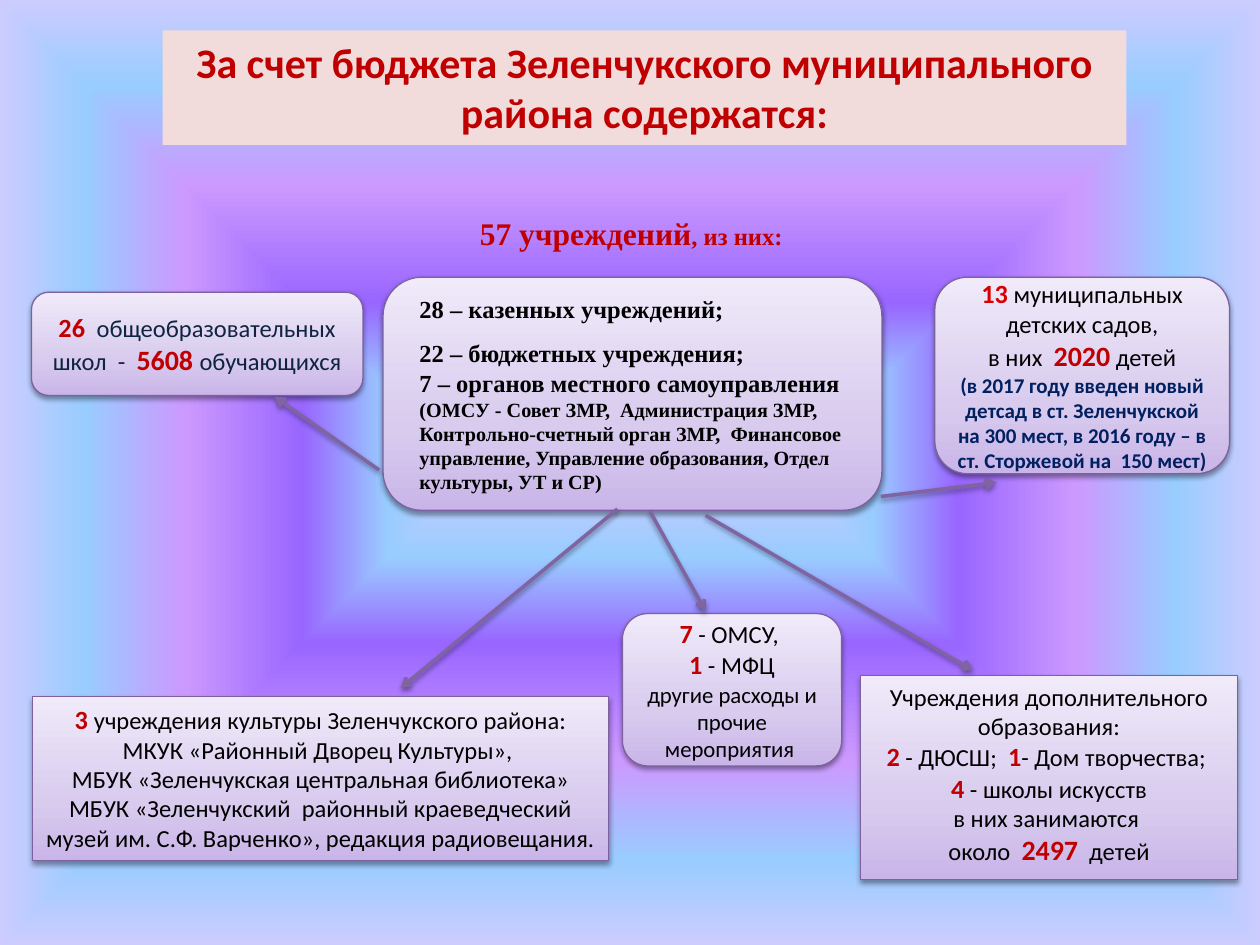
"""Build a slide on the institutions kept by a district budget."""
from dataclasses import dataclass
from lxml import etree
from pptx import Presentation
from pptx import util as u
from pptx.dml.color import RGBColor
from pptx.enum import shapes, text
from pptx.oxml.ns import qn

ROUND = shapes.MSO_SHAPE.ROUNDED_RECTANGLE
RECT = shapes.MSO_SHAPE.RECTANGLE
TOP = text.MSO_ANCHOR.TOP
MID = text.MSO_ANCHOR.MIDDLE
LEFT = text.PP_ALIGN.LEFT
CENTER = text.PP_ALIGN.CENTER


@dataclass(frozen=True)
class Theme:
    """Colours, gradients and run styles of the slide."""
    back = ((0, "CCCCFF"), (18, "99CCFF"), (36, "9966FF"),
            (61, "CC99FF"), (82, "99CCFF"), (100, "CCCCFF"))
    card = ((0, "C9B5E8"), (35, "D8CBEE"), (100, "F0EAF9"))
    edge = "7D60A0"
    arrow = "8064A2"
    band = "F2DCDB"
    runs = {
        "title": ("Calibri", 24, "C00000", True),
        "num": ("Calibri", 15, "C00000", True),
        "big": ("Calibri", 16, "C00000", True),
        "red": ("Calibri", 15, "DA0000", True),
        "body": ("Calibri", 14, "000000", False),
        "small": ("Calibri", 13, "000000", False),
        "navy": ("Calibri", 14, "0F243E", False),
        "note": ("Calibri", 12, "002060", True),
        "head": ("Times New Roman", 18, "C00000", True),
        "sub": ("Times New Roman", 14, "C00000", True),
        "item": ("Times New Roman", 14, "000000", True),
        "list": ("Times New Roman", 11.5, "000000", True),
    }


THEME = Theme()


def put(obj, vals):
    """Set each attribute named in a dict."""
    for key, val in vals.items():
        setattr(obj, key, val)


def node(top, tag, **vals):
    """Add a DrawingML child with the given attributes."""
    kid = etree.SubElement(top, qn("a:" + tag))
    for key, val in vals.items():
        kid.set(key, str(val))
    return kid


def blend(solid, stops):
    """Put a gradient in place of a solid fill and return it."""
    top = solid.getparent()
    grad = node(top, "gradFill", rotWithShape=1)
    row = node(grad, "gsLst")
    for pos, tone in stops:
        node(node(row, "gs", pos=pos * 1000), "srgbClr", val=tone)
    top.replace(solid, grad)
    return grad


def shade(props):
    """Give shape properties a soft shadow below."""
    drop = props.find(qn("a:effectLst"))
    if drop is None:
        drop = node(props, "effectLst")
    cast = node(drop, "outerShdw", blurRad=u.Pt(3.1), dist=u.Pt(1.6),
                dir=5400000, rotWithShape=0)
    node(node(cast, "srgbClr", val="000000"), "alpha", val=38000)


def stroke(line, tone, width):
    """Colour a line and set its width."""
    line.color.rgb = RGBColor.from_string(tone)
    line.width = u.Pt(width)


def write(frame, paras, anchor=MID, forms=()):
    """Write paragraphs of (text, style) runs into a frame."""
    put(frame, {"word_wrap": True, "auto_size": text.MSO_AUTO_SIZE.NONE,
                "vertical_anchor": anchor})
    forms = dict(forms)
    for i, runs in enumerate(paras):
        para = frame.add_paragraph() if i else frame.paragraphs[0]
        put(para, {"alignment": CENTER, **forms.get(i, {})})
        for words, style in runs:
            run = para.add_run()
            run.text = words
            face, size, tone, bold = THEME.runs[style]
            put(run.font, {"name": face, "size": u.Pt(size), "bold": bold})
            run.font.color.rgb = RGBColor.from_string(tone)


def backdrop(slide):
    """Fill the background with a gradient towards the centre."""
    slide.background.fill.solid()
    solid = slide._element.xpath(".//p:bgPr/a:solidFill")[0]
    half = dict.fromkeys("ltrb", 50000)
    node(node(blend(solid, THEME.back), "path", path="shape"),
         "fillToRect", **half)


def title(slide, box, words):
    """Place and format the title."""
    head = slide.shapes.title
    put(head, dict(zip(("left", "top", "width", "height"), map(u.Pt, box))))
    head.fill.solid()
    head.fill.fore_color.rgb = RGBColor.from_string(THEME.band)
    write(head.text_frame, [[(words, "title")]], TOP)


def card(slide, kind, box, paras=(), anchor=MID):
    """Add a shaded card with centred text."""
    shape = slide.shapes.add_shape(kind, *map(u.Pt, box))
    shape.shadow.inherit = False
    shape.fill.solid()
    props = shape._element.spPr
    node(blend(props.find(qn("a:solidFill")), THEME.card), "lin",
         ang=16200000, scaled=1)
    stroke(shape.line, THEME.edge, 0.75)
    shade(props)
    write(shape.text_frame, paras, anchor)


def label(slide, box, paras, forms):
    """Add a text box whose left-aligned paragraphs are indented."""
    frame = slide.shapes.add_textbox(*map(u.Pt, box)).text_frame
    write(frame, paras, TOP, forms)
    for para in frame.paragraphs:
        if para.alignment == LEFT:
            para._p.get_or_add_pPr().set("marL", str(u.Pt(14.4)))


def arrow(slide, *ends):
    """Add a shaded arrow from one point to another."""
    line = slide.shapes.add_connector(shapes.MSO_CONNECTOR.STRAIGHT,
                                      *map(u.Pt, ends))
    stroke(line.line, THEME.arrow, 2)
    node(line.line._get_or_add_ln(), "tailEnd", type="arrow")
    shade(line._element.spPr)


def main():
    """Build and save the slide."""
    deck = Presentation()
    put(deck, {"slide_width": u.Pt(720), "slide_height": u.Pt(540)})
    slide = deck.slides.add_slide(deck.slide_layouts[5])
    backdrop(slide)
    title(slide, (92.9, 17.3, 550.8, 65.5),
          "За счет бюджета Зеленчукского муниципального района содержатся:")

    card(slide, ROUND, (218.9, 158.4, 285.1, 133.2))
    card(slide, ROUND, (18, 167, 189.4, 59), [
        [("26 ", "num"), (" общеобразовательных школ  -  ", "navy"),
         ("5608 ", "big"), ("обучающихся", "navy")]])
    card(slide, ROUND, (534.2, 158.4, 168.5, 112.3), [
        [("13", "red"), (" муниципальных детских садов,", "body")],
        [("в них  ", "body"), ("2020", "big"), (" детей", "body")],
        [("(в 2017 году введен новый детсад в ст. Зеленчукской на 300 мест, "
          "в 2016 году – в ст. Сторжевой на  150 мест)", "note")]])
    card(slide, RECT, (491.8, 385.9, 215.3, 116.6), [
        [("Учреждения дополнительного образования:", "body")],
        [("2", "num"), (" - ДЮСШ;  ", "body"),
         ("1", "num"), ("- Дом творчества; ", "body")],
        [("4", "num"), (" - школы искусств", "body")],
        [("в них занимаются ", "body")],
        [("около  ", "body"), ("2497", "big"), ("  детей", "body")]], TOP)
    card(slide, RECT, (18.7, 398.2, 329, 93.6), [
        [("3 ", "num"),
         ("учреждения культуры Зеленчукского района:", "body")],
        [("МКУК «Районный Дворец Культуры», ", "body")],
        [("МБУК «Зеленчукская центральная библиотека» МБУК «Зеленчукский  "
          "районный краеведческий музей им. С.Ф. Варченко», "
          "редакция радиовещания.", "body")]], TOP)
    card(slide, ROUND, (355.7, 350.6, 125.3, 87.1), [
        [("7", "num"), (" - ОМСУ, ", "body")],
        [("1", "num"), (" - МФЦ", "body")],
        [("другие расходы и прочие мероприятия ", "small")]])

    tall = {"alignment": LEFT, "line_spacing": 1.5}
    label(slide, (218.2, 118.5, 285.1, 171), [
        [("57 учреждений", "head"), (", из них:", "sub")],
        [("28 – казенных учреждений;", "item")],
        [("22 – бюджетных учреждения;", "item")],
        [("7 – органов местного самоуправления ", "item"),
         ("(ОМСУ - Совет ЗМР,  Администрация ЗМР, Контрольно-счетный орган "
          "ЗМР,  Финансовое управление, Управление образования, "
          "Отдел культуры, УТ и СР)", "list")]],
        {1: {**tall, "space_before": u.Pt(16)}, 2: tall,
         3: {"alignment": LEFT}})

    for ends in ((352.8, 290.9, 229, 393.1), (403.2, 294.5, 555.8, 383),
                 (503.3, 283.7, 569.5, 275.8), (216.7, 268.6, 157, 226.8),
                 (371.5, 292.3, 403.2, 349.2)):
        arrow(slide, *ends)
    deck.save("out.pptx")


if __name__ == "__main__":
    main()
